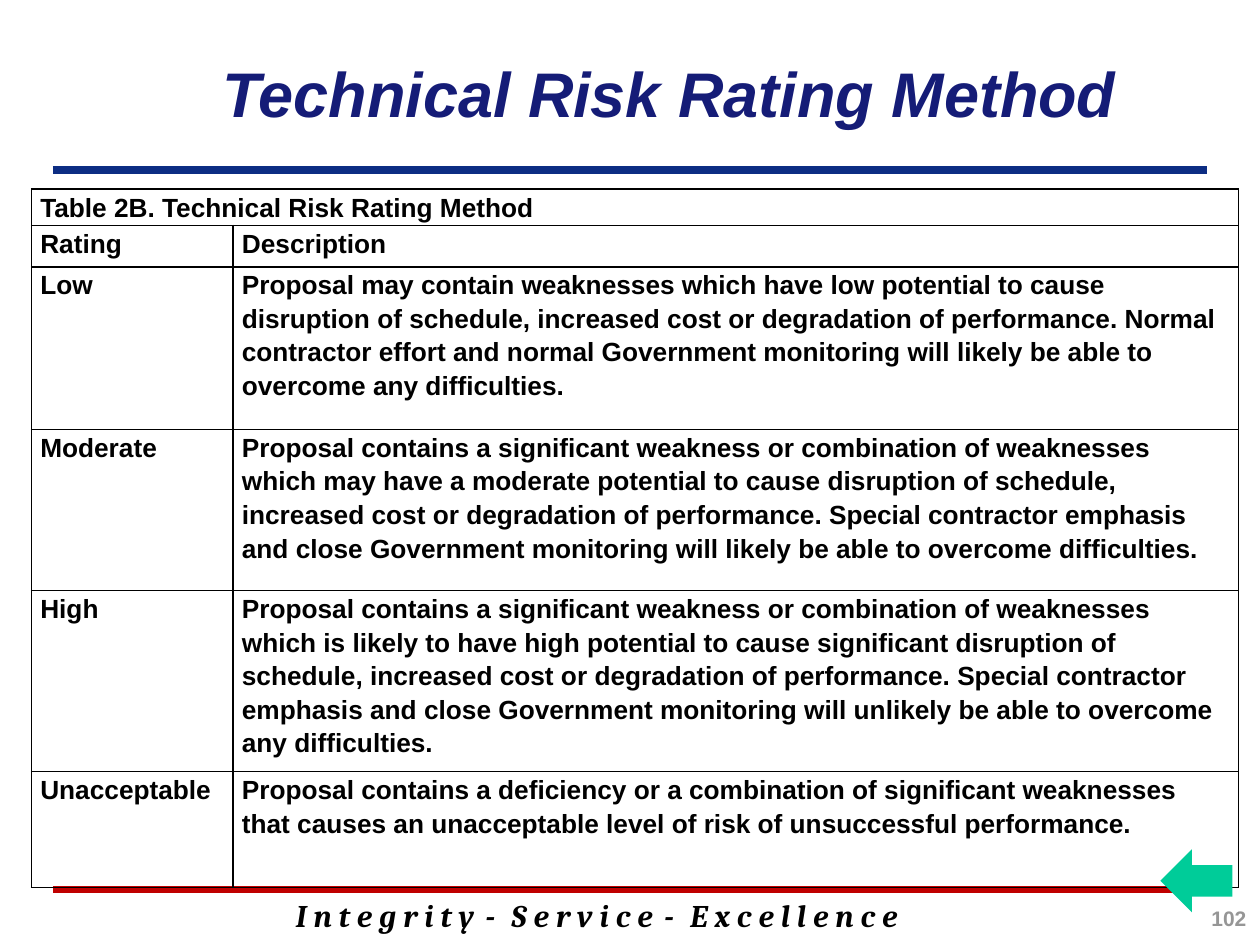
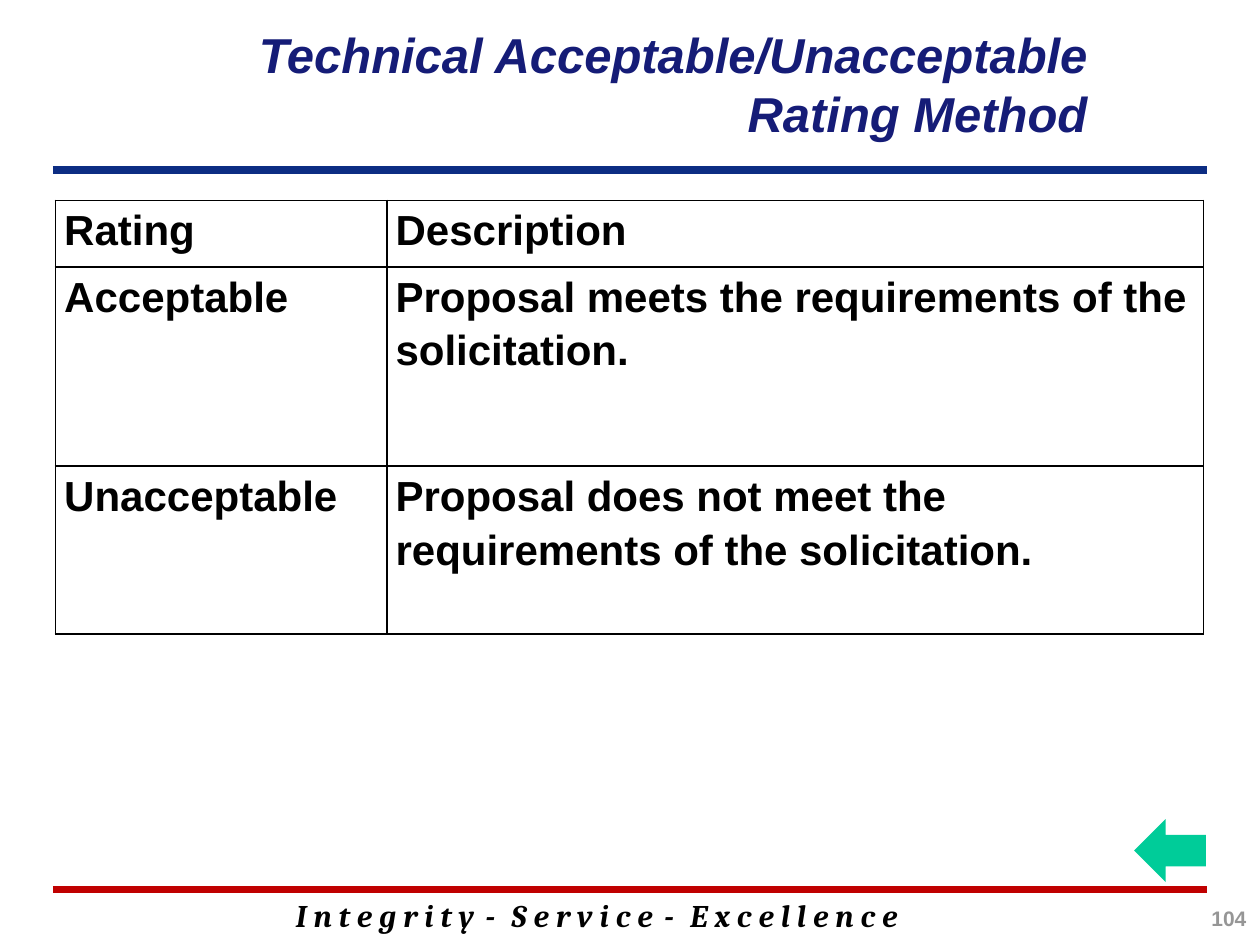
from lxml import etree
from pptx import Presentation
from pptx.dml.color import RGBColor
from pptx.enum import shapes, text
from pptx.oxml import parse_xml
from pptx.oxml.ns import nsdecls, qn
from pptx.util import Inches, Pt

COLORS = {
    "title": "151C77",
    "top_rule": "0C2D83",
    "bottom_rule": "C00000",
    "text": "000000",
    "number": "969696",
    "arrow": "00CC99",
}
FONT = "Arial"
MOTTO = ["I n t e g r i t y", "S e r v i c e", "E x c e l l e n c e"]

RISK_ROWS = [
    ("Table 2B. Technical Risk Rating Method", ""),
    ("Rating", "Description"),
    ("Low",
     "Proposal may contain weaknesses which have low potential to cause disruption "
     "of schedule, increased cost or degradation of performance. Normal contractor "
     "effort and normal Government monitoring will likely be able to overcome any "
     "difficulties."),
    ("Moderate",
     "Proposal contains a significant weakness or combination of weaknesses which "
     "may have a moderate potential to cause disruption of schedule, increased cost "
     "or degradation of performance. Special contractor emphasis and close "
     "Government monitoring will likely be able to overcome difficulties."),
    ("High",
     "Proposal contains a significant weakness or combination of weaknesses which "
     "is likely to have high potential to cause significant disruption of schedule, "
     "increased cost or degradation of performance. Special contractor emphasis and "
     "close Government monitoring will unlikely be able to overcome any "
     "difficulties."),
    ("Unacceptable",
     "Proposal contains a deficiency or a combination of significant weaknesses "
     "that causes an unacceptable level of risk of unsuccessful performance."),
]
ACCEPTABILITY_ROWS = [
    ("Rating", "Description"),
    ("Acceptable", "Proposal meets the requirements of the solicitation."),
    ("Unacceptable", "Proposal does not meet the requirements of the solicitation."),
]


def rgb(name):
    return RGBColor.from_string(COLORS[name])


def inches(values):
    return [Inches(value) for value in values]


def style(paragraph, size, color, name=FONT, italic=False,
          align=text.PP_ALIGN.LEFT):
    paragraph.alignment = align
    font = paragraph.font
    font.name, font.size = name, Pt(size)
    font.bold, font.italic = True, italic
    font.color.rgb = rgb(color)


def add_rule(slide, y, color):
    rule = slide.shapes.add_connector(
        shapes.MSO_CONNECTOR.STRAIGHT, *inches((0.42, y, 9.58, y)))
    rule.line.color.rgb = rgb(color)
    rule.line.width = Pt(4.5)
    etree.SubElement(rule._element.spPr, qn("a:effectLst"))


def add_text_frame(slide, box):
    frame = slide.shapes.add_textbox(*inches(box)).text_frame
    frame.word_wrap = True
    return frame


def add_motto(slide):
    """Write the letter-spaced motto, with wider gaps around its dashes."""
    line = add_text_frame(slide, (2.25, 7.06, 6.08, 0.4)).paragraphs[0]
    for index, word in enumerate(MOTTO):
        if index:
            dash = line.add_run()
            dash.text = " - "
            dash.font._element.set("spc", "265")
        line.add_run().text = word
    style(line, 18, "text", "Cambria", italic=True)


def add_slide(prs, title_text, title_box, title_size, number):
    slide = prs.slides.add_slide(prs.slide_layouts.get_by_name("Title Only"))
    add_rule(slide, 7.06, "bottom_rule")
    add_rule(slide, 1.35, "top_rule")
    add_motto(slide)

    title = slide.shapes.title
    title.left, title.top, title.width, title.height = inches(title_box)
    title.text = title_text
    title.text_frame.auto_size = text.MSO_AUTO_SIZE.NONE
    title.text_frame.vertical_anchor = text.MSO_ANCHOR.MIDDLE
    style(title.text_frame.paragraphs[0], title_size, "title", italic=True,
          align=text.PP_ALIGN.RIGHT)

    page = add_text_frame(slide, (8.74, 7.14, 1.25, 0.33)).paragraphs[0]
    page.text = number
    style(page, 12, "number", align=text.PP_ALIGN.RIGHT)
    return slide


def outline_cell(cell):
    properties = cell._tc.get_or_add_tcPr()
    for side in ("lnL", "lnR", "lnT", "lnB"):
        properties.append(parse_xml(
            f'<a:{side} {nsdecls("a")} w="{Pt(1)}"><a:solidFill>'
            f'<a:srgbClr val="{COLORS["text"]}"/></a:solidFill></a:{side}>'))


def add_rating_table(slide, left, top, widths, heights, rows, size):
    table = slide.shapes.add_table(
        len(rows), len(widths),
        *inches((left, top, sum(widths), sum(heights)))).table
    table.first_row = table.horz_banding = False
    for column, width in zip(table.columns, widths):
        column.width = Inches(width)
    for row, height, contents in zip(table.rows, heights, rows):
        row.height = Inches(height)
        for cell, content in zip(row.cells, contents):
            cell.margin_left = cell.margin_right = Inches(0.07)
            cell.margin_top = cell.margin_bottom = 0
            outline_cell(cell)
            cell.fill.background()
            cell.text = content
            paragraph = cell.text_frame.paragraphs[0]
            paragraph.line_spacing = 1.15
            style(paragraph, size, "text")
    return table


def add_back_arrow(slide, left, top):
    arrow = slide.shapes.add_shape(
        shapes.MSO_SHAPE.RIGHT_ARROW, *inches((left, top, 0.57, 0.5)))
    arrow.rotation = 180
    arrow.shadow.inherit = False
    arrow.fill.solid()
    arrow.fill.fore_color.rgb = rgb("arrow")
    arrow.line.fill.background()


def main():
    prs = Presentation()
    prs.slide_width, prs.slide_height = inches((10, 7.5))

    risk = add_slide(prs, "Technical Risk Rating Method",
                     (1.44, 0.12, 7.52, 1.22), 36, "102")
    table = add_rating_table(risk, 0.25, 1.5, (1.6, 7.98),
                             (0.25, 0.33, 1.29, 1.28, 1.43, 0.92), RISK_ROWS, 15)
    table.cell(0, 0).merge(table.cell(0, 1))
    add_back_arrow(risk, 9.21, 6.74)

    acceptability = add_slide(prs, "Technical Acceptable/Unacceptable Rating Method",
                              (1.33, 0, 7.4, 1.33), 28, "104")
    add_rating_table(acceptability, 0.44, 1.59, (2.63, 6.48),
                     (0.53, 1.58, 1.33), ACCEPTABILITY_ROWS, 24)
    add_back_arrow(acceptability, 9, 6.5)

    prs.save("out.pptx")


if __name__ == "__main__":
    main()
